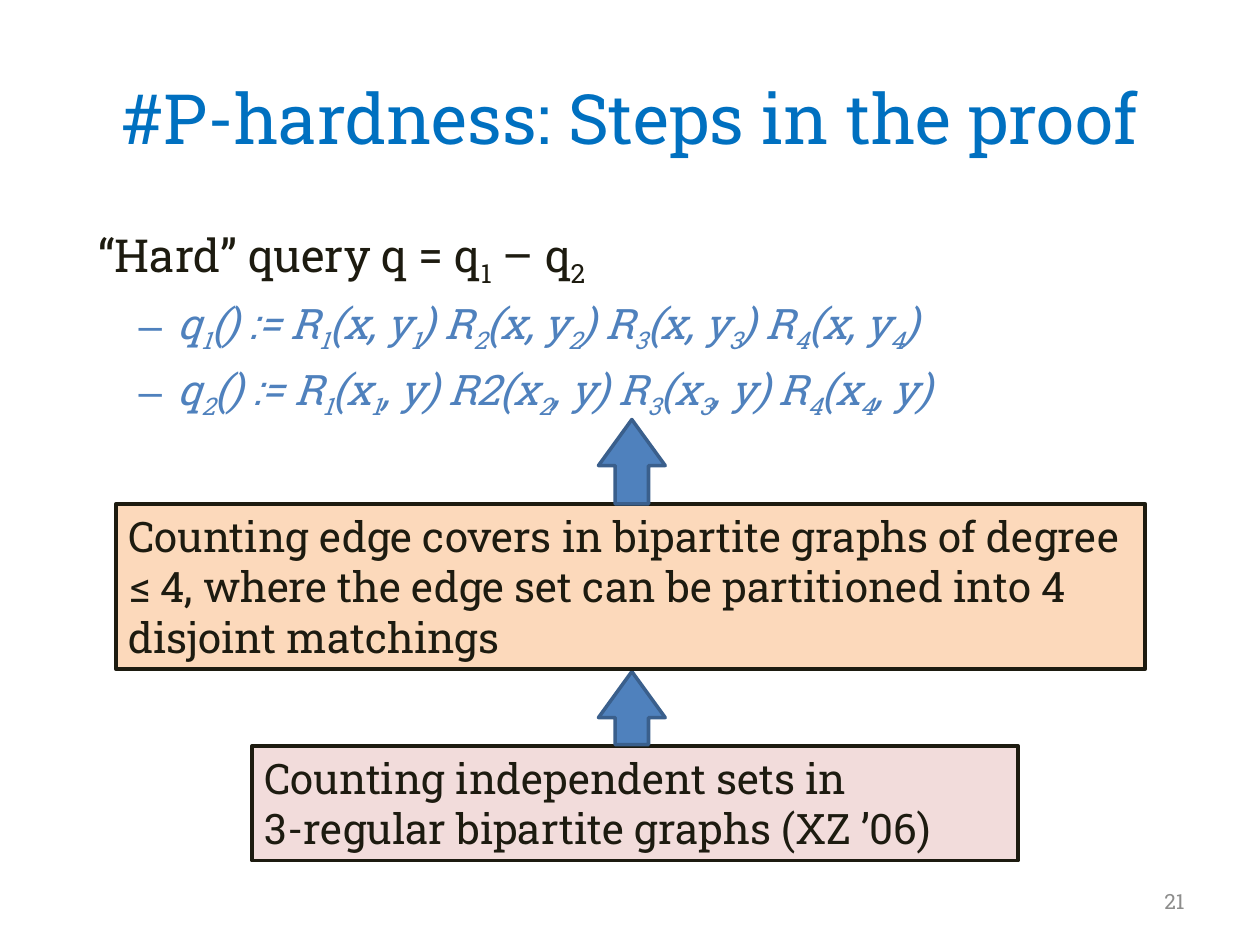
from lxml.etree import SubElement
from pptx import Presentation
from pptx.dml.color import RGBColor
from pptx.enum.shapes import MSO_SHAPE as Shape
from pptx.enum.text import MSO_ANCHOR as Anchor, MSO_AUTO_SIZE as AutoSize, PP_ALIGN as Align
from pptx.oxml.ns import qn
from pptx.util import Inches, Pt

FONT = "Roboto Slab"
TITLE_BLUE = RGBColor(0x00, 0x70, 0xC0)
INK = RGBColor(0x1D, 0x1B, 0x10)
BLUE = RGBColor(0x4F, 0x81, 0xBD)
DARK_BLUE = RGBColor(0x3A, 0x5F, 0x8C)
PINK = RGBColor(0xF2, 0xDC, 0xDB)
PEACH = RGBColor(0xFC, 0xD9, 0xBB)
GREY = RGBColor(0x8D, 0x8D, 0x8C)

HARD_QUERY = "“Hard” query q = q_1 – q_2"
SUBQUERIES = [
    "q_1() := R_1(x, y_1) R_2(x, y_2) R_3(x, y_3) R_4(x, y_4)",
    "q_2() := R_1(x_1, y) R2(x_2, y) R_3(x_3, y) R_4(x_4, y)",
]
EDGE_COVERS = ("Counting edge covers in bipartite graphs of degree ≤ 4, where the edge set "
               "can be partitioned into 4 disjoint matchings")
INDEPENDENT_SETS = "Counting independent sets in\n3-regular bipartite graphs (XZ ’06)"


def place(part, box):
    """Move a part to a box of left, top, width and height in inches."""
    part.left, part.top, part.width, part.height = map(Inches, box)


def style_run(run, size, color, italic=None):
    """Give a run its font, size, colour and slant."""
    run.font.name = FONT
    run.font.size = Pt(size)
    run.font.color.rgb = color
    run.font.italic = italic


def style_paragraphs(frame, size, color, align):
    """Format every run and align every paragraph of a text frame."""
    for paragraph in frame.paragraphs:
        paragraph.alignment = align
        for run in paragraph.runs:
            style_run(run, size, color)


def write_formula(paragraph, formula, size, color, italic=None):
    """Write a formula in which an underscore lowers the next character."""
    start, *rest = formula.split("_")
    pieces = [(start, False)]
    for part in rest:
        pieces += [(part[0], True), (part[1:], False)]
    for wording, lowered in pieces:
        if wording:
            run = paragraph.add_run()
            run.text = wording
            style_run(run, size, color, italic)
            if lowered:
                run.font._element.set("baseline", "-25000")


def add_title(slide, box):
    """Fill the title placeholder."""
    title = slide.shapes.title
    place(title, box)
    frame = title.text_frame
    frame.text = "#P-hardness: Steps in the proof"
    frame.vertical_anchor = Anchor.MIDDLE
    frame.auto_size = AutoSize.NONE
    style_paragraphs(frame, 39.6, TITLE_BLUE, Align.CENTER)


def add_queries(slide, box):
    """Fill the body placeholder with the hard query and its two parts."""
    body = slide.placeholders[1]
    place(body, box)
    frame = body.text_frame
    frame.auto_size = AutoSize.NONE
    heading = frame.paragraphs[0]
    write_formula(heading, HARD_QUERY, 26, INK)
    properties = heading._p.get_or_add_pPr()
    properties.set("marL", str(Inches(0.18)))
    properties.set("indent", "0")
    SubElement(properties, qn("a:buNone"))
    for subquery in SUBQUERIES:
        item = frame.add_paragraph()
        item.level = 1
        write_formula(item, subquery, 24, BLUE, italic=True)


def add_outlined(slide, kind, box, fill, line, weight):
    """Add a flat filled shape with an outline."""
    shape = slide.shapes.add_shape(kind, *map(Inches, box))
    shape.shadow.inherit = False
    shape.fill.solid()
    shape.fill.fore_color.rgb = fill
    shape.line.color.rgb = line
    shape.line.width = Pt(weight)
    return shape


def add_problem(slide, box, wording, fill):
    """Add the box of one counting problem."""
    problem = add_outlined(slide, Shape.RECTANGLE, box, fill, INK, 2.25)
    frame = problem.text_frame
    frame.word_wrap = True
    frame.vertical_anchor = Anchor.TOP
    frame.text = wording
    style_paragraphs(frame, 24, INK, Align.LEFT)


def add_reduction(slide, box):
    """Add the upward arrow from one step to the next."""
    arrow = add_outlined(slide, Shape.UP_ARROW, box, BLUE, DARK_BLUE, 2)
    arrow.adjustments[0] = 0.5
    arrow.adjustments[1] = 0.69


def add_page_number(slide, box):
    """Add the page number at the lower right."""
    number = slide.shapes.add_textbox(*map(Inches, box))
    frame = number.text_frame
    frame.word_wrap = True
    frame.vertical_anchor = Anchor.MIDDLE
    frame.text = "21"
    style_paragraphs(frame, 12, GREY, Align.RIGHT)


def main():
    """Build the slide and save it."""
    deck = Presentation()
    deck.slide_width, deck.slide_height = Inches(10), Inches(7.5)
    slide = deck.slides.add_slide(deck.slide_layouts[1])
    add_title(slide, (0.5, 0.3, 9, 1.25))
    add_queries(slide, (0.5, 1.75, 9, 4.95))
    add_problem(slide, (2, 5.92, 6.08, 0.91), INDEPENDENT_SETS, PINK)
    add_reduction(slide, (4.75, 5.33, 0.53, 0.58))
    add_problem(slide, (0.92, 4, 8.17, 1.31), EDGE_COVERS, PEACH)
    add_reduction(slide, (4.75, 3.33, 0.53, 0.67))
    add_page_number(slide, (7.17, 6.95, 2.33, 0.4))
    deck.save("out.pptx")


if __name__ == "__main__":
    main()
